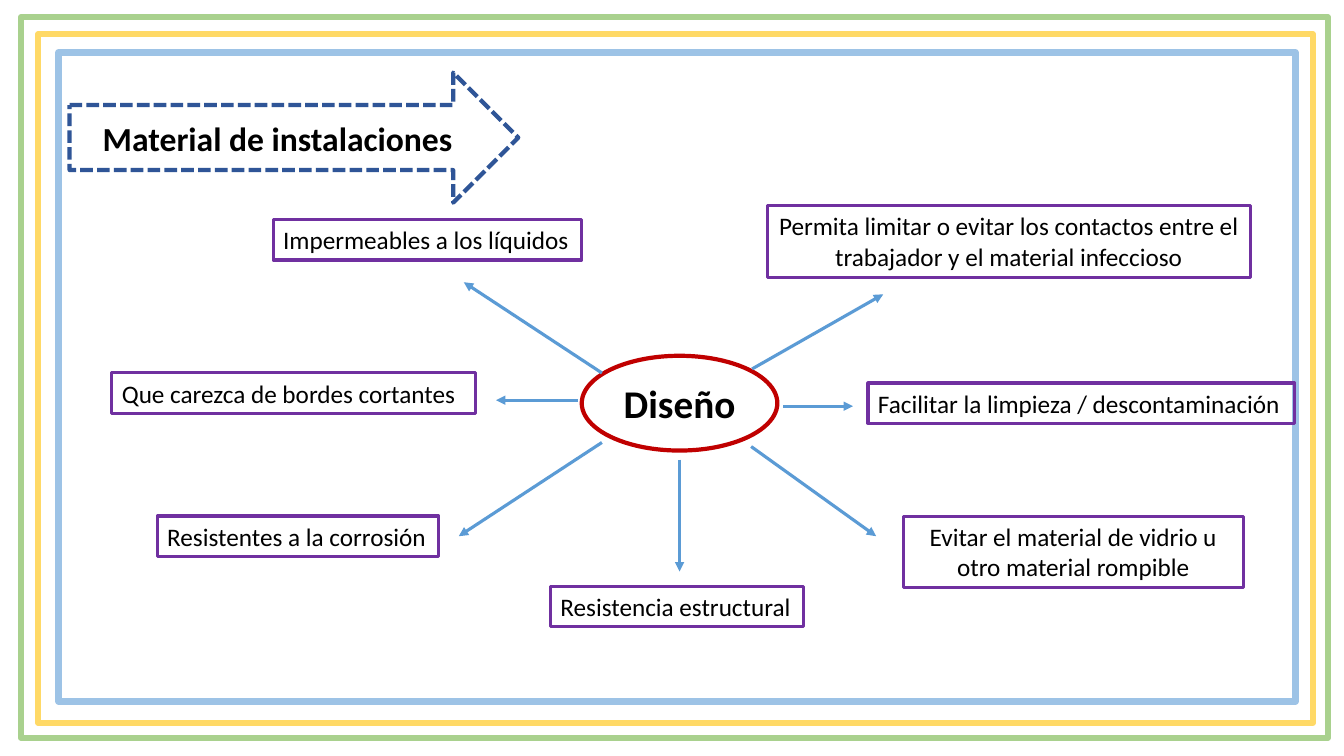
import pptx
import pptx.dml.color
import pptx.enum.dml
import pptx.enum.shapes
import pptx.enum.text
import pptx.oxml.ns
import pptx.oxml.xmlchemy
import pptx.util

GREEN = pptx.dml.color.RGBColor(0xA9, 0xD1, 0x8E)
YELLOW = pptx.dml.color.RGBColor(0xFF, 0xD9, 0x66)
LIGHT_BLUE = pptx.dml.color.RGBColor(0x9D, 0xC3, 0xE6)
NAVY = pptx.dml.color.RGBColor(0x2F, 0x55, 0x97)
RED = pptx.dml.color.RGBColor(0xC0, 0x00, 0x00)
PURPLE = pptx.dml.color.RGBColor(0x70, 0x30, 0xA0)
BLUE = pptx.dml.color.RGBColor(0x5B, 0x9B, 0xD5)
WHITE = pptx.dml.color.RGBColor(0xFF, 0xFF, 0xFF)
BLACK = pptx.dml.color.RGBColor(0x00, 0x00, 0x00)

FRAMES = [
    (0.21, 0.17, 12.96, 7.15, GREEN),
    (0.38, 0.34, 12.64, 6.83, YELLOW),
    (0.58, 0.52, 12.27, 6.44, LIGHT_BLUE),
]
WRAPPED_LABELS = [
    (7.61, 2.04, 4.79, 0.71,
     "Permita limitar o evitar los contactos entre el trabajador y el material infeccioso"),
    (8.96, 5.12, 3.37, 0.71, "Evitar el material de vidrio u otro material rompible"),
]
SINGLE_LABELS = [
    (8.61, 3.8, 4.23, 0.4, "Facilitar la limpieza / descontaminación"),
    (2.71, 2.18, 3.06, 0.4, "Impermeables a los líquidos"),
    (1.56, 5.12, 2.79, 0.4, "Resistentes a la corrosión"),
    (5.46, 5.82, 2.51, 0.4, "Resistencia estructural"),
    (1.11, 3.7, 3.61, 0.4, "Que carezca de bordes cortantes"),
]
ARROWS = [
    (7.46, 3.66, 8.76, 2.92),
    (5.97, 3.7, 4.6, 2.8),
    (5.73, 3.97, 4.92, 3.97),
    (5.97, 4.39, 4.55, 5.32),
    (7.77, 4.03, 8.46, 4.03),
    (6.74, 4.56, 6.74, 5.67),
    (7.45, 4.43, 8.69, 5.32),
]


def set_line(shape, color, width):
    """Give a shape or connector a solid line."""
    shape.line.color.rgb = color
    shape.line.width = pptx.util.Pt(width)


def write_text(shape, text, size, align, bold=False):
    """Fill a shape with one paragraph of black text."""
    para = shape.text_frame.paragraphs[0]
    para.text = text
    para.alignment = align
    para.font.name = "Calibri"
    para.font.size = pptx.util.Pt(size)
    para.font.bold = bold
    para.font.color.rgb = BLACK


def add_outline(page, kind, place, color, width):
    """Add an unfilled preset shape with a coloured outline."""
    shape = page.shapes.add_shape(kind, *map(pptx.util.Inches, place))
    shape.shadow.inherit = False
    shape.fill.background()
    set_line(shape, color, width)
    return shape


def add_heading(page, kind, place, color, text, size):
    """Add a white preset shape with bold centred text."""
    shape = add_outline(page, kind, place, color, 3)
    shape.fill.solid()
    shape.fill.fore_color.rgb = WHITE
    shape.text_frame.vertical_anchor = pptx.enum.text.MSO_ANCHOR.MIDDLE
    write_text(shape, text, size, pptx.enum.text.PP_ALIGN.CENTER, bold=True)
    return shape


def add_label(page, place, text, wrap):
    """Add a purple-framed text box, centred when it wraps."""
    box = page.shapes.add_textbox(*map(pptx.util.Inches, place))
    set_line(box, PURPLE, 2.25)
    box.text_frame.word_wrap = wrap
    box.text_frame.auto_size = pptx.enum.text.MSO_AUTO_SIZE.SHAPE_TO_FIT_TEXT
    align = pptx.enum.text.PP_ALIGN.CENTER if wrap else pptx.enum.text.PP_ALIGN.LEFT
    write_text(box, text, 18, align)


def add_arrow(page, ends):
    """Add a straight blue arrow from its first point to its second."""
    arrow = page.shapes.add_connector(
        pptx.enum.shapes.MSO_CONNECTOR.STRAIGHT, *map(pptx.util.Inches, ends))
    set_line(arrow, BLUE, 2.25)
    head = pptx.oxml.xmlchemy.OxmlElement("a:tailEnd")
    head.set("type", "triangle")
    properties = arrow._element.spPr
    properties.find(pptx.oxml.ns.qn("a:ln")).append(head)
    properties.append(pptx.oxml.xmlchemy.OxmlElement("a:effectLst"))


def main():
    """Build the slide and save it."""
    deck = pptx.Presentation()
    deck.slide_width = pptx.util.Inches(13.33)
    deck.slide_height = pptx.util.Inches(7.5)
    page = deck.slides.add_slide(deck.slide_layouts[6])
    for *place, color in FRAMES:
        add_outline(page, pptx.enum.shapes.MSO_SHAPE.RECTANGLE, place, color, 4.5)
    title = add_heading(page, pptx.enum.shapes.MSO_SHAPE.RIGHT_ARROW,
                        (0.69, 0.72, 4.45, 1.29), NAVY, "Material de instalaciones", 24)
    title.line.dash_style = pptx.enum.dml.MSO_LINE.SQUARE_DOT
    add_heading(page, pptx.enum.shapes.MSO_SHAPE.OVAL,
                (5.77, 3.53, 1.94, 0.94), RED, "Diseño ", 28)
    for *place, text in WRAPPED_LABELS:
        add_label(page, place, text, wrap=True)
    for *place, text in SINGLE_LABELS:
        add_label(page, place, text, wrap=False)
    for ends in ARROWS:
        add_arrow(page, ends)
    deck.save("out.pptx")


if __name__ == "__main__":
    main()
